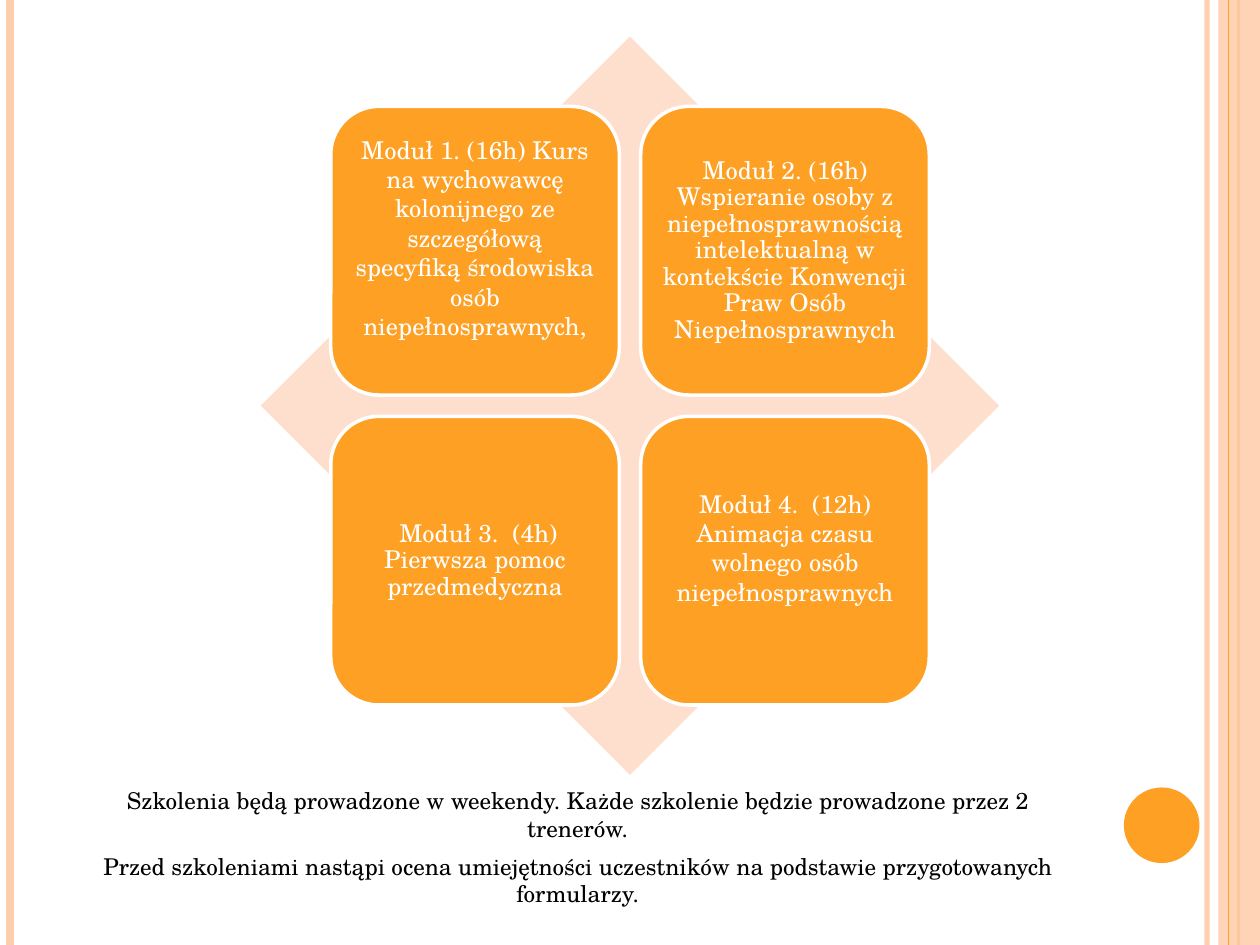
from pptx import Presentation
from pptx.dml.color import RGBColor
from pptx.enum import shapes, text
from pptx.oxml.ns import qn
from pptx.util import Inches, Pt
from lxml import etree

ORANGE = RGBColor(0xFD, 0xA0, 0x23)
PEACH = RGBColor(0xFE, 0xCD, 0xAC)
PALE = RGBColor(0xFE, 0xDF, 0xCD)
WHITE = RGBColor(0xFF, 0xFF, 0xFF)
BLACK = RGBColor(0, 0, 0)
FONT = "TeX Gyre Schola"

MODULES = [
    ("Moduł 1. (16h) Kurs na wychowawcę kolonijnego ze szczegółową specyfiką "
     "środowiska osób niepełnosprawnych,", 1, 0.21),
    ("Moduł 2. (16h) Wspieranie osoby z niepełnosprawnością intelektualną w "
     "kontekście Konwencji Praw Osób Niepełnosprawnych", 0.9, 0),
    (" Moduł 3.  (4h) Pierwsza pomoc przedmedyczna", 0.9, 0),
    ("Moduł 4.  (12h) Animacja czasu wolnego osób niepełnosprawnych", 1, 0.21),
]
NOTES = [
    "Szkolenia będą prowadzone w weekendy. Każde szkolenie będzie prowadzone "
    "przez 2 trenerów.",
    "Przed szkoleniami nastąpi ocena umiejętności uczestników na podstawie "
    "przygotowanych formularzy.",
]


def set_opacity(element, percent):
    color = element.find(".//" + qn("a:srgbClr"))
    etree.SubElement(color, qn("a:alpha"), val=str(percent * 1000))


def add_shape(page, kind, box, fill, outline=None):
    shape = page.shapes.add_shape(kind, *map(Inches, box))
    shape.shadow.inherit = False
    shape.fill.solid()
    shape.fill.fore_color.rgb = fill
    if outline is None:
        shape.line.fill.background()
    else:
        shape.line.color.rgb = outline
        shape.line.width = Pt(2)
    return shape


def add_rule(page, x, top, height, color, width, opacity=100):
    rule = page.shapes.add_connector(
        shapes.MSO_CONNECTOR.STRAIGHT,
        Inches(x), Inches(top), Inches(x), Inches(top + height))
    rule.line.color.rgb = color
    rule.line.width = Pt(width)
    properties = rule._element.spPr
    etree.SubElement(properties, qn("a:effectLst"))
    if opacity < 100:
        set_opacity(properties, opacity)


def write_text(frame, lines, size, color, spacing=1, before=0,
               anchor=text.MSO_ANCHOR.TOP, insets=(0.1, 0.05, 0.1, 0.05)):
    frame.word_wrap = True
    frame.vertical_anchor = anchor
    (frame.margin_left, frame.margin_top,
     frame.margin_right, frame.margin_bottom) = map(Inches, insets)
    for index, line in enumerate(lines):
        para = frame.add_paragraph() if index else frame.paragraphs[0]
        para.alignment = text.PP_ALIGN.CENTER
        para.line_spacing = spacing
        para.space_before = Pt(before)
        span = para.add_run()
        span.text = line
        span.font.name = FONT
        span.font.size = Pt(size)
        span.font.color.rgb = color


def add_frame(page, box):
    left, top, width, height = box
    right = left + width
    add_rule(page, right - 0.42, top, height, PEACH, 3, opacity=93)
    add_rule(page, left + 0.08, top, height, PEACH, 4.5)
    add_rule(page, right - 0.17, top, height, ORANGE, 1.5)
    band = add_shape(page, shapes.MSO_SHAPE.RECTANGLE,
                     (right - 0.33, top, 0.33, height), PEACH)
    set_opacity(band._element.spPr, 87)
    add_rule(page, right - 0.25, top, height, ORANGE, 0.75)
    add_shape(page, shapes.MSO_SHAPE.OVAL,
              (right - 1.08, top + 6.25, 0.6, 0.6), ORANGE)


def add_notes(page, box):
    notes = page.shapes.add_textbox(*map(Inches, box))
    write_text(notes.text_frame, NOTES, 13.2, BLACK, before=6)


def add_modules(page, box):
    left, top, width, height = box
    add_shape(page, shapes.MSO_SHAPE.DIAMOND, box, PALE)
    side, step = 2.29, 2.46
    start_x = left + (width - side - step) / 2
    start_y = top + (height - side - step) / 2
    for index, (label, spacing, lift) in enumerate(MODULES):
        row, column = divmod(index, 2)
        card = add_shape(page, shapes.MSO_SHAPE.ROUNDED_RECTANGLE,
                         (start_x + column * step, start_y + row * step,
                          side, side), ORANGE, WHITE)
        write_text(card.text_frame, [label], 14, WHITE, spacing=spacing,
                   anchor=text.MSO_ANCHOR.MIDDLE,
                   insets=(0.06, 0.06, 0.06, 0.06 + lift))


def main():
    deck = Presentation()
    deck.slide_width, deck.slide_height = Inches(10), Inches(7.5)
    page = deck.slides.add_slide(deck.slide_layouts[6])
    add_frame(page, (0, 0, 10, 7.5))
    add_notes(page, (0.5, 6.19, 8.17, 0.89))
    add_modules(page, (2.07, 0.29, 5.86, 5.86))
    deck.save("out.pptx")


if __name__ == "__main__":
    main()
